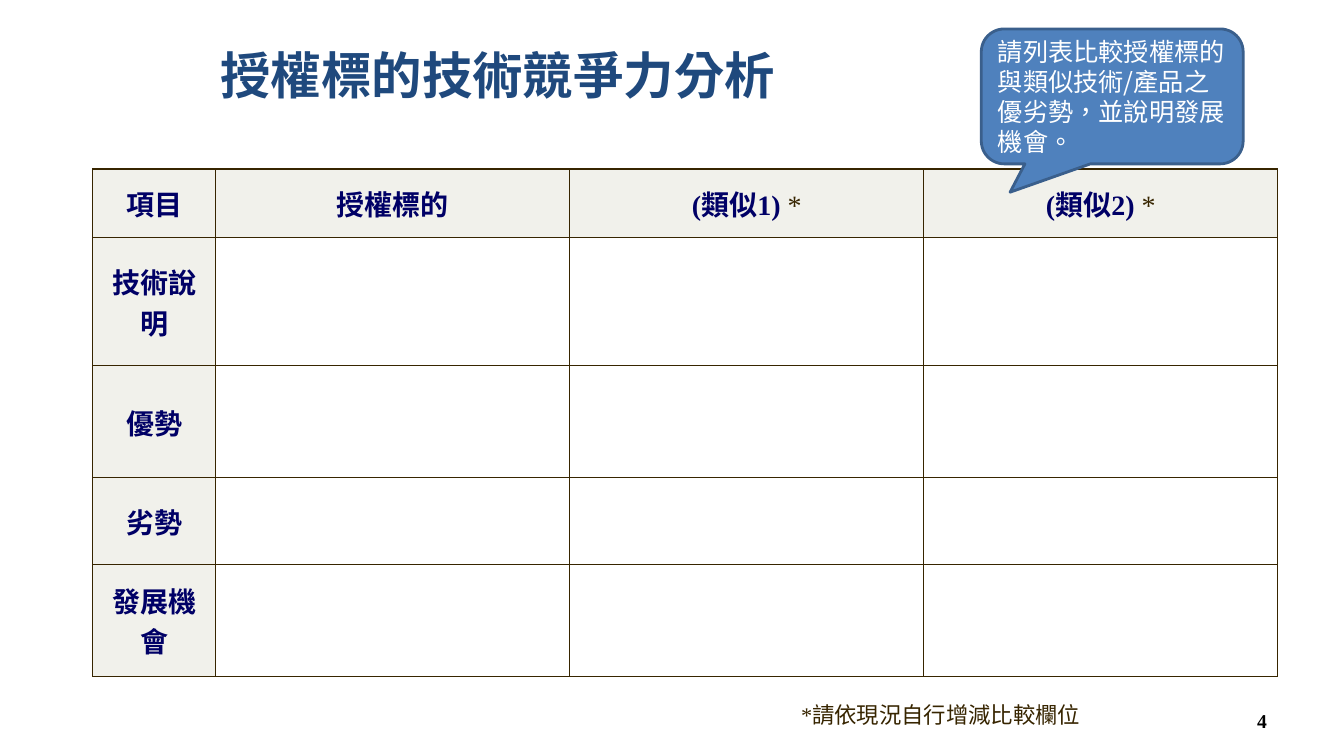
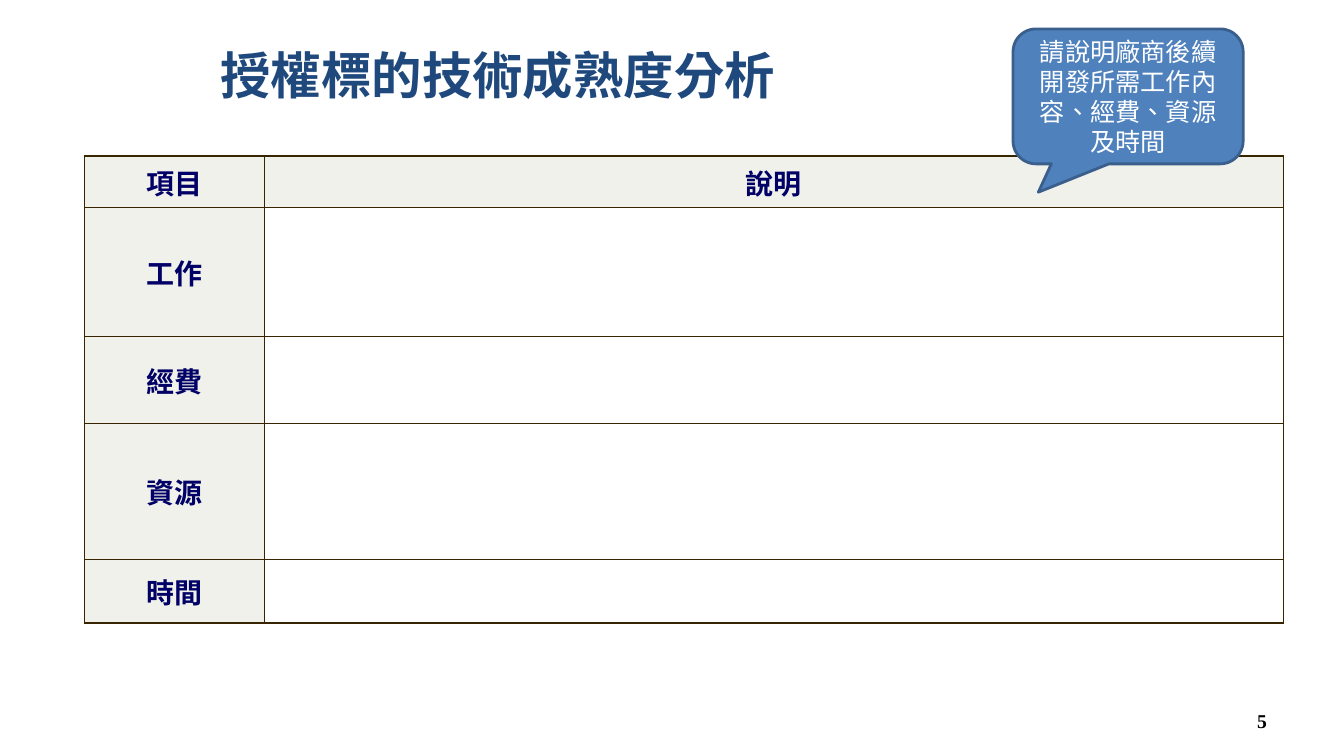
from lxml import etree
from pptx import Presentation
from pptx.dml.color import RGBColor
from pptx.enum.lang import MSO_LANGUAGE_ID
from pptx.enum.shapes import MSO_SHAPE
from pptx.enum.text import MSO_ANCHOR, PP_ALIGN
from pptx.oxml.ns import qn
from pptx.util import Cm, Pt

TITLE_BLUE = RGBColor(0x1F, 0x49, 0x7D)
NAVY = RGBColor(0x00, 0x00, 0x66)
BROWN = RGBColor(0x37, 0x25, 0x00)
HEADING_FILL = RGBColor(0xF1, 0xF1, 0xEB)
CALLOUT_FILL = RGBColor(0x4F, 0x81, 0xBD)
CALLOUT_LINE = RGBColor(0x3A, 0x5F, 0x8C)
WHITE = RGBColor(0xFF, 0xFF, 0xFF)
BLACK = RGBColor(0x00, 0x00, 0x00)
SERIF = "Times New Roman"
SANS = "Noto Sans CJK SC"

SLIDES = [
    {
        "number": "4",
        "title": "授權標的技術競爭力分析",
        "headers": ["項目", "授權標的", "(類似1) *", "(類似2) *"],
        "items": ["技術說明", "優勢", "劣勢", "發展機會"],
        "corner": (2.34, 4.26),
        "columns": [3.1, 8.92, 8.92, 8.92],
        "rows": [1.73, 3.23, 2.82, 2.18, 2.82],
        "callout": "請列表比較授權標的與類似技術/產品之優劣勢，並說明發展機會。",
        "callout_box": (24.73, 6.6),
        "callout_align": PP_ALIGN.LEFT,
        "footnote": "*請依現況自行增減比較欄位",
    },
    {
        "number": "5",
        "title": "授權標的技術成熟度分析",
        "headers": ["項目", "說明"],
        "items": ["工作", "經費", "資源", "時間"],
        "corner": (2.13, 3.93),
        "columns": [4.53, 25.68],
        "rows": [1.3, 3.25, 2.2, 3.41, 1.61],
        "callout": "請說明廠商後續開發所需工作內容、經費、資源及時間",
        "callout_box": (25.53, 5.8),
        "callout_align": PP_ALIGN.CENTER,
        "footnote": None,
    },
]


def write(frame, text, size, color, bold=False, align=PP_ALIGN.LEFT,
          anchor=MSO_ANCHOR.MIDDLE, font=SERIF, spacing=None):
    """Fill a text frame with one formatted paragraph and return it."""
    frame.text = text
    frame.word_wrap = True
    frame.vertical_anchor = anchor
    para = frame.paragraphs[0]
    para.alignment = align
    para.line_spacing = spacing
    for run in para.runs:
        run.font.name = font
        run.font.size = Pt(size)
        run.font.bold = bold
        run.font.color.rgb = color
        run.font.language_id = MSO_LANGUAGE_ID.TRADITIONAL_CHINESE
        latin = run.font._element.find(qn("a:latin"))
        east_asian = etree.Element(qn("a:ea"), typeface=SANS)
        latin.addnext(east_asian)
    return para


def add_borders(cell):
    properties = cell._tc.get_or_add_tcPr()
    for position, side in enumerate(("a:lnL", "a:lnR", "a:lnT", "a:lnB")):
        line = etree.Element(qn(side), w=str(Pt(1)))
        fill = etree.SubElement(line, qn("a:solidFill"))
        etree.SubElement(fill, qn("a:srgbClr"), val=str(BROWN))
        properties.insert(position, line)


deck = Presentation()
deck.slide_width, deck.slide_height = Cm(33.87), Cm(19.05)

for content in SLIDES:
    page = deck.slides.add_slide(deck.slide_layouts[6])
    shapes = page.shapes

    number = shapes.add_textbox(Cm(24.28), Cm(17.65), Cm(7.9), Cm(1.02))
    write(number.text_frame, content["number"], 14, BLACK, True, PP_ALIGN.RIGHT)

    title = shapes.add_textbox(Cm(5.31), Cm(0.53), Cm(24.33), Cm(2.24))
    write(title.text_frame, content["title"], 36, TITLE_BLUE, True,
          anchor=MSO_ANCHOR.BOTTOM)

    columns, rows = content["columns"], content["rows"]
    left, top = content["corner"]
    table = shapes.add_table(len(rows), len(columns), Cm(left), Cm(top),
                             Cm(sum(columns)), Cm(sum(rows))).table
    for column, width in zip(table.columns, columns):
        column.width = Cm(width)
    for row, height in zip(table.rows, rows):
        row.height = Cm(height)

    for row_index in range(len(rows)):
        for column_index in range(len(columns)):
            cell = table.cell(row_index, column_index)
            if row_index and column_index:
                cell.fill.background()
            else:
                cell.fill.solid()
                cell.fill.fore_color.rgb = HEADING_FILL
                cell.vertical_anchor = MSO_ANCHOR.MIDDLE
                text = (content["items"][row_index - 1] if row_index
                        else content["headers"][column_index])
                label, star, _ = text.partition(" *")
                para = write(cell.text_frame, label, 20, NAVY, True, PP_ALIGN.CENTER)
                if star:
                    mark = para.add_run()
                    mark.text = star
                    mark.font.name = SERIF
                    mark.font.size = Pt(20)
                    mark.font.bold = False
                    mark.font.color.rgb = BROWN
            add_borders(cell)

    if content["footnote"]:
        footnote = shapes.add_textbox(Cm(19.94), Cm(17.53), Cm(7.65), Cm(0.94))
        write(footnote.text_frame, content["footnote"], 16, BROWN,
              anchor=MSO_ANCHOR.TOP, spacing=Pt(19.3))

    left, width = content["callout_box"]
    callout = shapes.add_shape(MSO_SHAPE.ROUNDED_RECTANGULAR_CALLOUT,
                               Cm(left), Cm(0.73), Cm(width), Cm(3.4))
    callout.shadow.inherit = False
    for index, value in enumerate((-0.39, 0.71, 0.17)):
        callout.adjustments[index] = value
    callout.fill.solid()
    callout.fill.fore_color.rgb = CALLOUT_FILL
    callout.line.color.rgb = CALLOUT_LINE
    callout.line.width = Pt(2)
    write(callout.text_frame, content["callout"], 18, WHITE,
          align=content["callout_align"], font=SANS, spacing=Pt(21.5))

deck.save("out.pptx")
